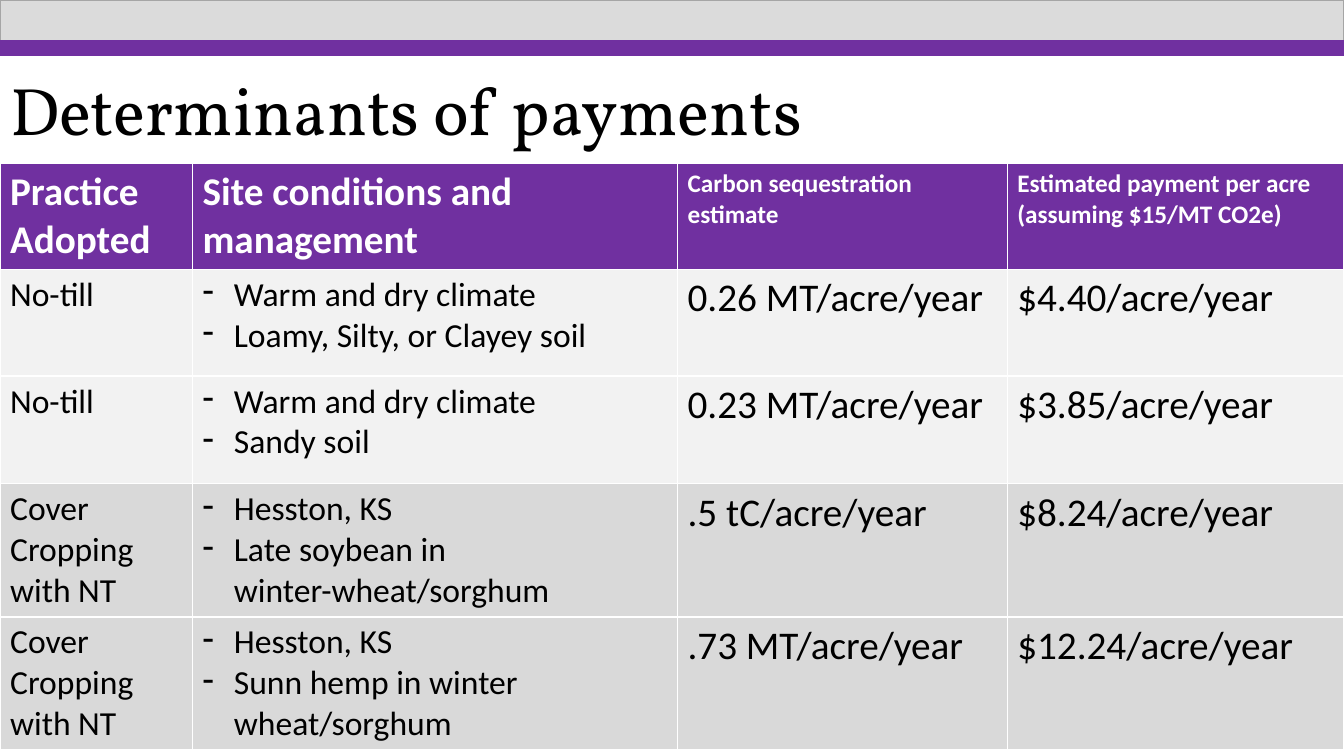
from lxml.etree import SubElement
from pptx import Presentation
from pptx.dml.color import RGBColor
from pptx.enum.shapes import MSO_SHAPE as Shape
from pptx.enum.text import MSO_ANCHOR as Anchor, PP_ALIGN as Align
from pptx.oxml.ns import qn
from pptx.util import Inches, Pt

PURPLE, WHITE, BLACK = "7030A0", "FFFFFF", "000000"
LIGHT, GREY = "F2F2F2", "D9D9D9"
COLUMN_WIDTHS = [1.91, 4.81, 3.27, 3.34]
ROW_HEIGHTS = [0.88, 1.06, 1.07, 1.14, 1.14]
HEADER_SIZES = [28, 28, 18, 18]
BODY_SIZES = [24, 24, 28, 28]
CONDITIONS_COLUMN = 1
HEADER = ["Practice Adopted", "Site conditions and management",
          "Carbon sequestration estimate",
          "Estimated payment per acre\n(assuming $15/MT CO2e)"]
PRACTICES = [
    (LIGHT, ["No-till", "Warm and dry climate\nLoamy, Silty, or Clayey soil",
             "0.26 MT/acre/year", "$4.40/acre/year"]),
    (LIGHT, ["No-till", "Warm and dry climate\nSandy soil",
             "0.23 MT/acre/year", "$3.85/acre/year"]),
    (GREY, ["Cover Cropping with NT",
            "Hesston, KS\nLate soybean in winter-wheat/sorghum",
            ".5 tC/acre/year", "$8.24/acre/year"]),
    (GREY, ["Cover Cropping with NT",
            "Hesston, KS\nSunn hemp in winter wheat/sorghum",
            ".73 MT/acre/year", "$12.24/acre/year"]),
]


def paint(color_format, color):
    """Set a fill or font colour from a hex string."""
    color_format.rgb = RGBColor.from_string(color)


def format_text(frame, font, size, color, bold=False):
    """Format every run of a text frame."""
    for para in frame.paragraphs:
        for span in para.runs:
            span.font.name = font
            span.font.size = Pt(size)
            span.font.bold = bold
            paint(span.font.color, color)


def add_bar(slide, top, height, fill, line):
    """Add a bar across the whole slide."""
    bar = slide.shapes.add_shape(Shape.RECTANGLE, 0, Inches(top),
                                 Inches(13.33), Inches(height))
    bar.shadow.inherit = False
    bar.fill.solid()
    paint(bar.fill.fore_color, fill)
    paint(bar.line.color, line)
    bar.line.width = Pt(1)


def set_title(slide, text):
    """Place and format the title placeholder."""
    title = slide.shapes.title
    title.left, title.top = 0, Inches(0.4)
    title.width, title.height = Inches(13.1), Inches(1.45)
    frame = title.text_frame
    frame.text = text
    frame.vertical_anchor = Anchor.MIDDLE
    frame.paragraphs[0].alignment = Align.LEFT
    frame.paragraphs[0].line_spacing = 0.9
    format_text(frame, "Vollkorn", 48, BLACK)


def add_dash(para):
    """Give a paragraph a hanging dash bullet."""
    properties = para._p.get_or_add_pPr()
    properties.set("marL", str(Inches(0.31)))
    properties.set("indent", str(-Inches(0.31)))
    SubElement(properties, qn("a:buFontTx"))
    SubElement(properties, qn("a:buChar"), char="-")


def fill_row(row, texts, sizes, fill, color, bold=False):
    """Write and format the cells of one table row."""
    for cell, text, size in zip(row.cells, texts, sizes):
        cell.text_frame.text = text
        format_text(cell.text_frame, "Calibri", size, color, bold)
        cell.fill.solid()
        paint(cell.fill.fore_color, fill)


def add_payment_table(slide):
    """Add the table of practices and their payments."""
    table = slide.shapes.add_table(
        len(ROW_HEIGHTS), len(COLUMN_WIDTHS), 0, Inches(1.62),
        Inches(sum(COLUMN_WIDTHS)), Inches(sum(ROW_HEIGHTS))).table
    for column, width in zip(table.columns, COLUMN_WIDTHS):
        column.width = Inches(width)
    for row, height in zip(table.rows, ROW_HEIGHTS):
        row.height = Inches(height)
    fill_row(table.rows[0], HEADER, HEADER_SIZES, PURPLE, WHITE, bold=True)
    for index, (fill, texts) in enumerate(PRACTICES, start=1):
        fill_row(table.rows[index], texts, BODY_SIZES, fill, BLACK)
        for para in table.cell(index, CONDITIONS_COLUMN).text_frame.paragraphs:
            add_dash(para)


def main():
    """Build the slide and save the deck."""
    deck = Presentation()
    deck.slide_width, deck.slide_height = Inches(13.33), Inches(7.5)
    slide = deck.slides.add_slide(deck.slide_layouts[5])
    add_bar(slide, 0, 0.4, "DBDBDB", "A5A5A5")
    add_bar(slide, 0.4, 0.15, PURPLE, PURPLE)
    set_title(slide, "Determinants of payments")
    add_payment_table(slide)
    deck.save("out.pptx")


if __name__ == "__main__":
    main()
